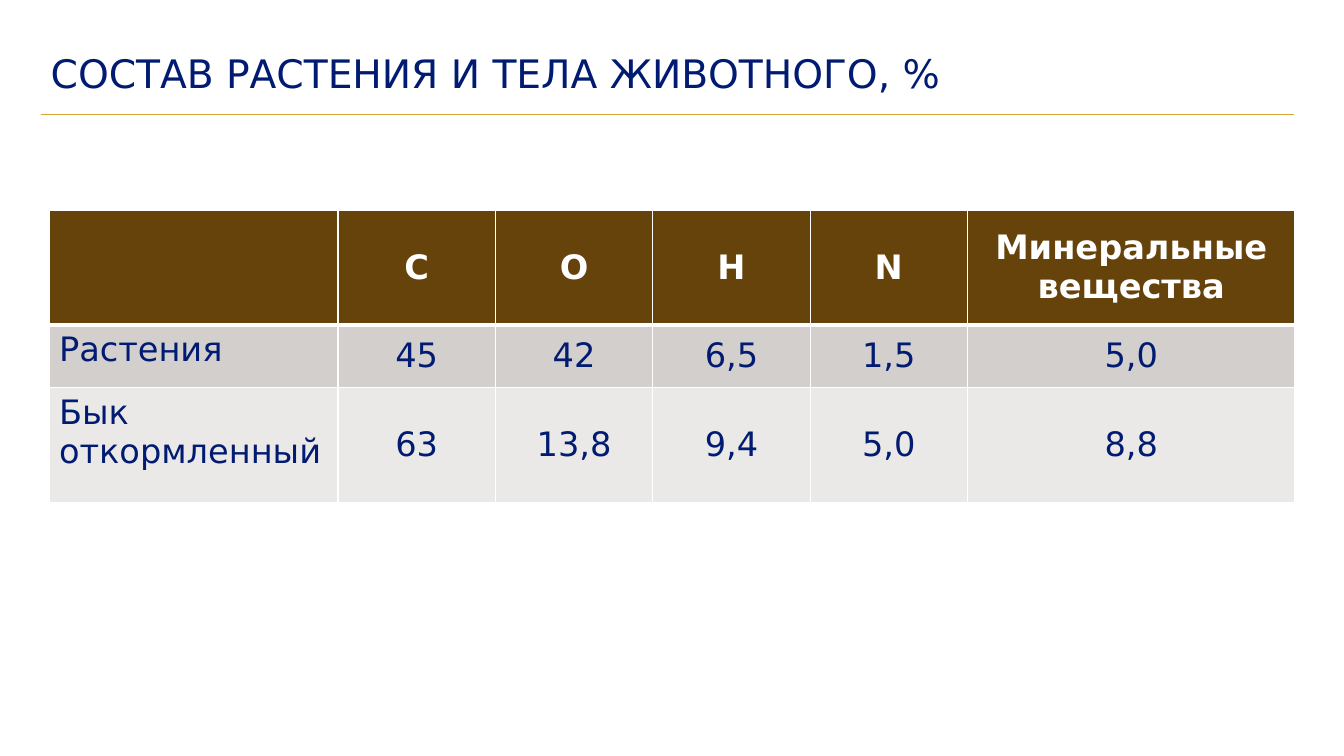
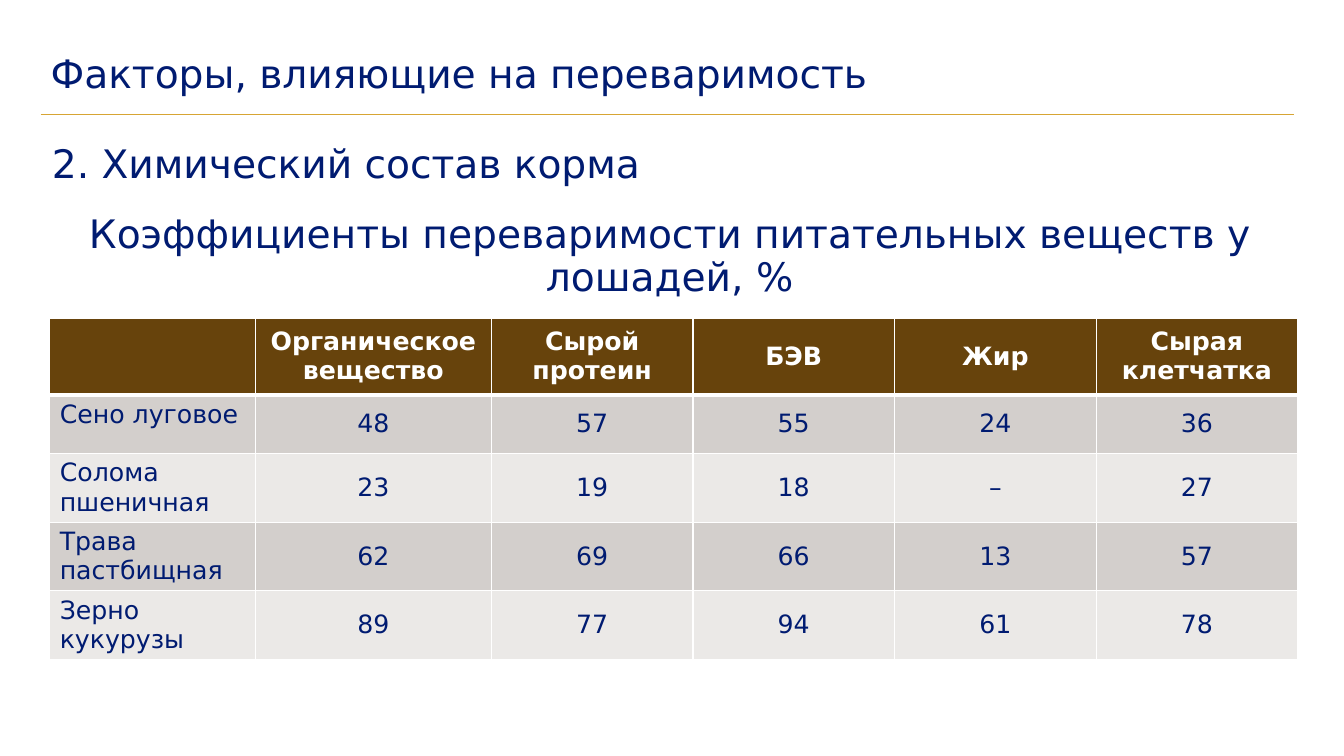
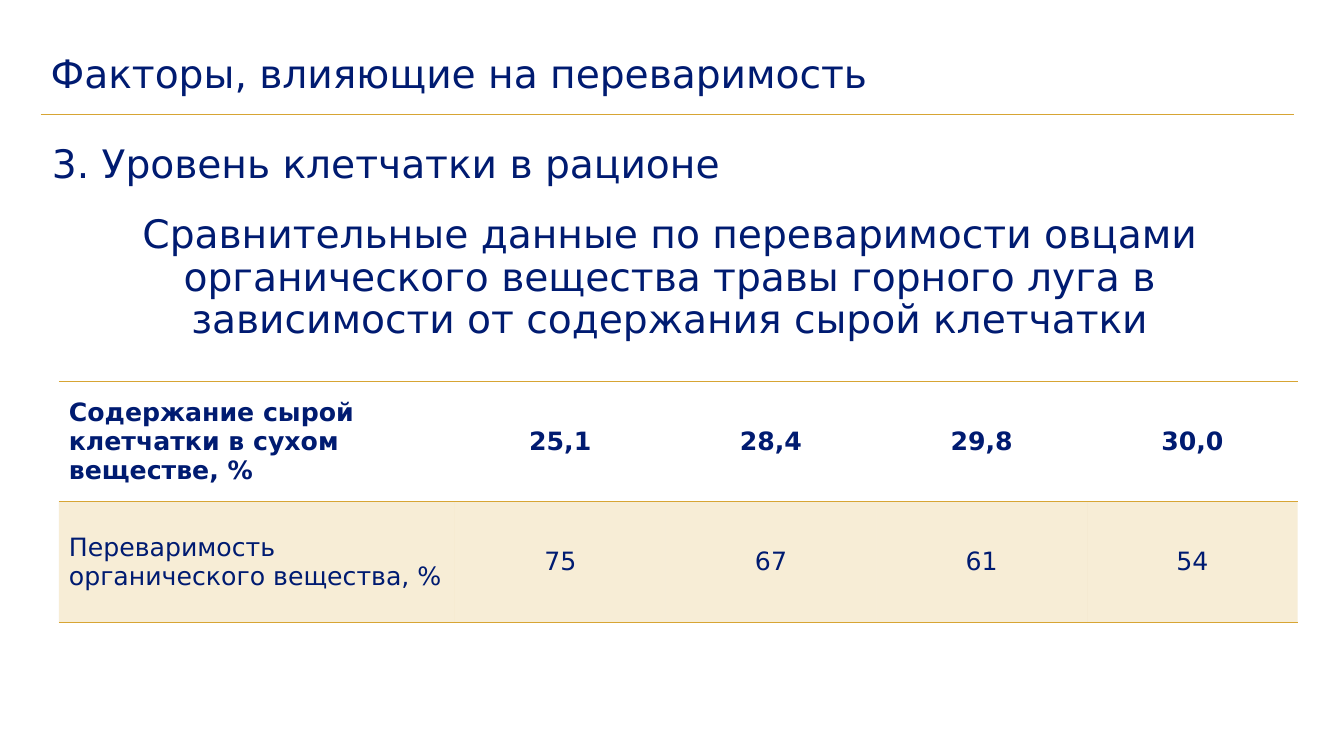
from lxml.etree import SubElement
from pptx import Presentation
from pptx.dml.color import RGBColor
from pptx.enum.shapes import MSO_CONNECTOR
from pptx.enum.text import MSO_ANCHOR, MSO_AUTO_SIZE, PP_ALIGN
from pptx.oxml.ns import qn
from pptx.util import Pt

# Shared look
FONT = "DejaVu Sans"
COLORS = {"navy": "001B71", "gold": "D7A534", "brown": "67430C",
          "band_dark": "D3CFCC", "band_light": "EBE9E7", "white": "FFFFFF"}
TITLE_BOX = (29, 32.5, 895.5, 43)
TITLE_RULE = (29, 82, 924.5)  # left, y, right
HEADING_SIZE = 28

# Table styles: fills are (colour, opacity %), borders are (colour, width)
BANDED = {
    "header_color": "white", "label_anchor": MSO_ANCHOR.TOP,
    "header_fill": ("brown", 100),
    "body_fills": [("band_dark", 100), ("band_light", 100)],
    "side": ("white", 1), "top": ("white", 1),
    "header_bottom": ("white", 3), "bottom": ("white", 1),
}
RULED = {
    "header_color": "navy", "label_anchor": MSO_ANCHOR.MIDDLE,
    "header_fill": None, "body_fills": [("gold", 20)],
    "side": None, "top": ("gold", 1),
    "header_bottom": ("gold", 1), "bottom": ("gold", 1),
}

# Content
FACTORS = "Факторы, влияющие на переваримость"
SLIDES = [
    {"title": "СОСТАВ РАСТЕНИЯ И ТЕЛА ЖИВОТНОГО, %",
     "table": {
         "style": BANDED, "size": 24, "at": (35, 150),
         "columns": [206.5] + [112.4] * 4 + [234], "rows": [82, 45, 82],
         "data": [
             ["", "C", "O", "H", "N", "Минеральные вещества"],
             ["Растения", "45", "42", "6,5", "1,5", "5,0"],
             ["Бык откормленный", "63", "13,8", "9,4", "5,0", "8,8"]]}},
    {"title": FACTORS,
     "heading": "2. Химический состав корма",
     "caption": "Коэффициенты переваримости питательных веществ у лошадей, %",
     "table": {
         "style": BANDED, "size": 18, "at": (35.5, 227.5),
         "columns": [147, 168.5] + [144] * 4, "rows": [54.5, 42] + [49] * 3,
         "data": [
             ["", "Органическое вещество", "Сырой протеин", "БЭВ", "Жир",
              "Сырая клетчатка"],
             ["Сено луговое", "48", "57", "55", "24", "36"],
             ["Солома пшеничная", "23", "19", "18", "–", "27"],
             ["Трава пастбищная", "62", "69", "66", "13", "57"],
             ["Зерно кукурузы", "89", "77", "94", "61", "78"]]}},
    {"title": FACTORS,
     "heading": "3. Уровень клетчатки в рационе",
     "caption": "Сравнительные данные по переваримости овцами органического "
                "вещества травы горного луга в зависимости от содержания "
                "сырой клетчатки",
     "table": {
         "style": RULED, "size": 18, "at": (42, 272.5),
         "columns": [283] + [150.5] * 4, "rows": [86, 86],
         "data": [
             ["Содержание сырой клетчатки в сухом веществе, %",
              "25,1", "28,4", "29,8", "30,0"],
             ["Переваримость органического вещества, %",
              "75", "67", "61", "54"]]}},
]


def rgb(name):
    return RGBColor.from_string(COLORS[name])


def format_text(text_frame, text, size, color, align, bold=False):
    text_frame.text = text
    paragraph = text_frame.paragraphs[0]
    paragraph.alignment = align
    for run in paragraph.runs:
        run.font.name = FONT
        run.font.size = Pt(size)
        run.font.bold = bold
        run.font.color.rgb = rgb(color)
    return paragraph


def format_heading(shape, text, anchor=MSO_ANCHOR.TOP, align=PP_ALIGN.LEFT):
    text_frame = shape.text_frame
    text_frame.word_wrap = True
    text_frame.auto_size = MSO_AUTO_SIZE.NONE
    text_frame.vertical_anchor = anchor
    paragraph = format_text(text_frame, text, HEADING_SIZE, "navy", align)
    paragraph.line_spacing = 0.9
    paragraph.space_before = Pt(0)


def add_heading(slide, text, top, align=PP_ALIGN.LEFT):
    box = slide.shapes.add_textbox(Pt(30), Pt(top), Pt(896.5), Pt(36.5))
    format_heading(box, text, align=align)


def add_title(slide, text):
    title = slide.shapes.title
    title.left, title.top, title.width, title.height = map(Pt, TITLE_BOX)
    format_heading(title, text, MSO_ANCHOR.MIDDLE)
    left, y, right = map(Pt, TITLE_RULE)
    rule = slide.shapes.add_connector(MSO_CONNECTOR.STRAIGHT, left, y, right, y)
    rule.line.color.rgb = rgb("gold")
    rule.line.width = Pt(1)
    SubElement(rule._element.spPr, qn("a:effectLst"))


def add_border(properties, side, border):
    line = SubElement(properties, qn(f"a:ln{side}"))
    if border is None:
        line.set("w", "0")
        SubElement(line, qn("a:noFill"))
        return
    color, width = border
    line.set("w", str(Pt(width)))
    fill = SubElement(line, qn("a:solidFill"))
    SubElement(fill, qn("a:srgbClr")).set("val", COLORS[color])


def fill_cell(cell, fill):
    if fill is None:
        cell.fill.background()
        return
    color, opacity = fill
    cell.fill.solid()
    cell.fill.fore_color.rgb = rgb(color)
    if opacity < 100:
        value = cell._tc.tcPr.find(f"{qn('a:solidFill')}/{qn('a:srgbClr')}")
        SubElement(value, qn("a:alpha")).set("val", str(opacity * 1000))


def add_table(slide, style, size, at, columns, rows, data):
    frame = slide.shapes.add_table(len(rows), len(columns), *map(Pt, at),
                                   Pt(sum(columns)), Pt(sum(rows)))
    table = frame.table
    table.first_row = table.horz_banding = False
    for column, width in zip(table.columns, columns):
        column.width = Pt(width)
    for r, (row, height) in enumerate(zip(table.rows, rows)):
        row.height = Pt(height)
        header = r == 0
        bands = style["body_fills"]
        fill = style["header_fill"] if header else bands[(r - 1) % len(bands)]
        top = style[("top", "header_bottom", "bottom")[min(r, 2)]]
        bottom = style["header_bottom" if header else "bottom"]
        for c, cell in enumerate(row.cells):
            label = c == 0
            cell.vertical_anchor = (style["label_anchor"] if label
                                    else MSO_ANCHOR.MIDDLE)
            format_text(cell.text_frame, data[r][c], size,
                        style["header_color"] if header else "navy",
                        PP_ALIGN.LEFT if label else PP_ALIGN.CENTER, header)
            borders = zip("LRTB", (style["side"], style["side"], top, bottom))
            for side, border in borders:
                add_border(cell._tc.get_or_add_tcPr(), side, border)
            fill_cell(cell, fill)


def main():
    presentation = Presentation()
    presentation.slide_width, presentation.slide_height = Pt(960), Pt(540)
    title_only = presentation.slide_layouts[5]
    for content in SLIDES:
        slide = presentation.slides.add_slide(title_only)
        add_title(slide, content["title"])
        if "heading" in content:
            add_heading(slide, content["heading"], 99.5)
            add_heading(slide, content["caption"], 150, PP_ALIGN.CENTER)
        add_table(slide, **content["table"])
    presentation.save("out.pptx")


if __name__ == "__main__":
    main()
